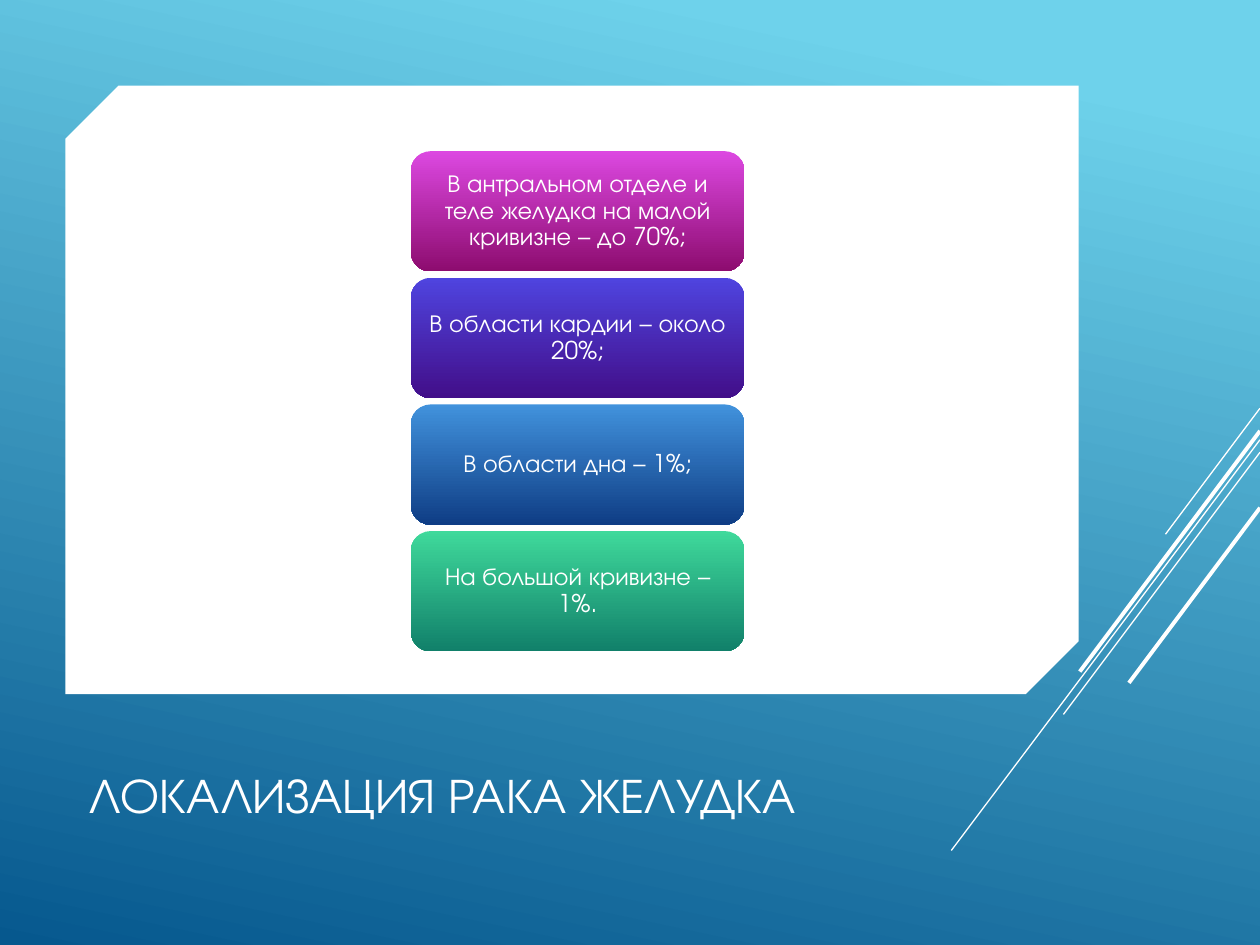
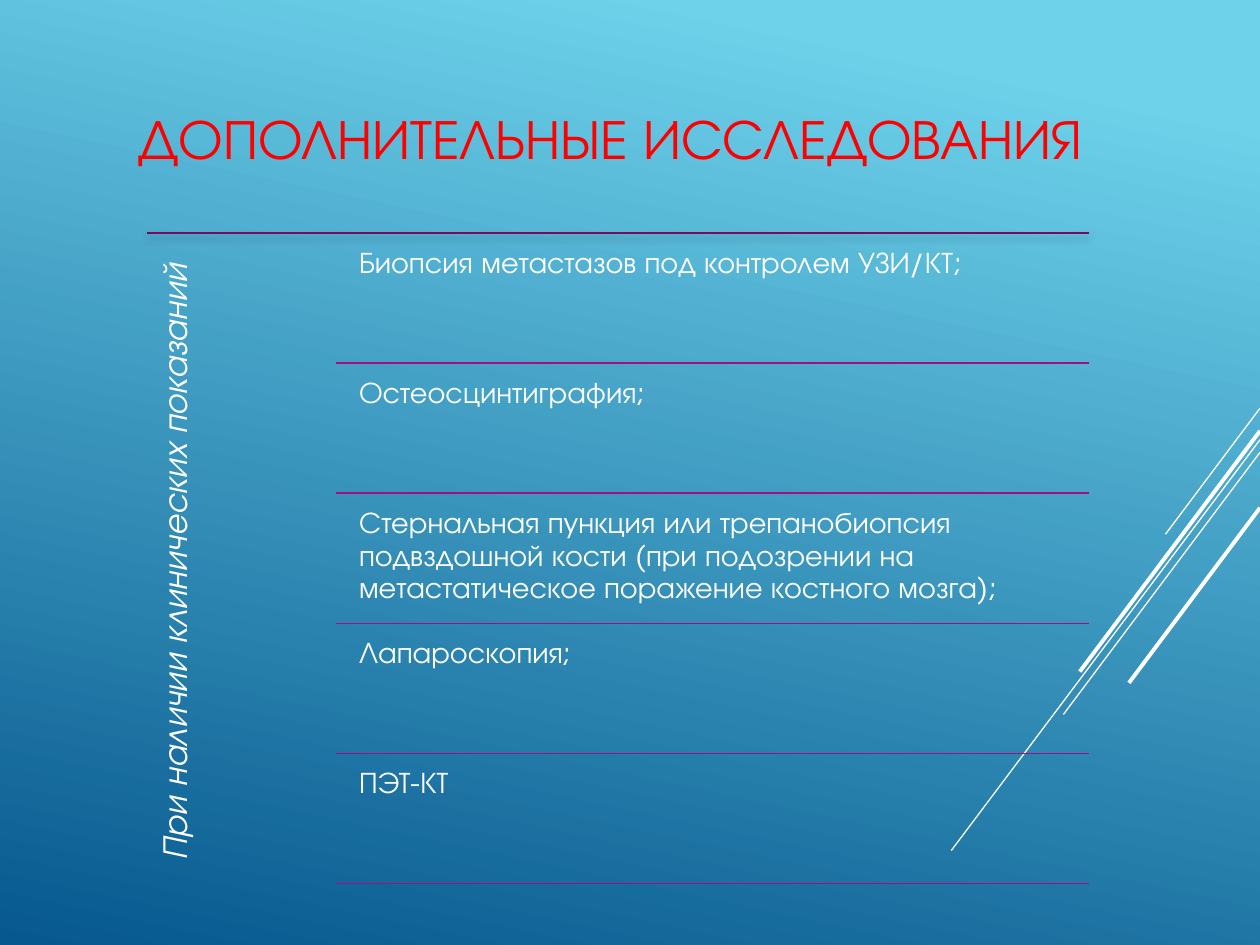
from lxml import etree
from pptx import Presentation
from pptx.dml.color import RGBColor
from pptx.enum.shapes import MSO_CONNECTOR, MSO_SHAPE
from pptx.enum.text import MSO_ANCHOR, MSO_AUTO_SIZE, PP_ALIGN
from pptx.oxml.ns import qn
from pptx.util import Inches, Pt

STRAIGHT = MSO_CONNECTOR.STRAIGHT
RECTANGLE = MSO_SHAPE.RECTANGLE
ROUNDED = MSO_SHAPE.ROUNDED_RECTANGLE
SNIPPED = MSO_SHAPE.SNIP_2_DIAG_RECTANGLE
TOP, MIDDLE, BOTTOM = MSO_ANCHOR.TOP, MSO_ANCHOR.MIDDLE, MSO_ANCHOR.BOTTOM
LEFT, CENTER = PP_ALIGN.LEFT, PP_ALIGN.CENTER
NO_AUTOFIT = MSO_AUTO_SIZE.NONE

FONT = "TeX Gyre Adventor"
WHITE, RED = "FFFFFF", "FF0000"
TOP_RULE, ROW_RULE = "7A0A60", "A50E82"
SLIDE_BOX = (0, 0, 10, 7.5)
BACKDROP_STOPS = ((0.1, "6ED2EB"), (1, "06588E"))
STREAKS = (
    ((10, 3.24), (9.25, 4.24), 0.75),
    ((10, 3.49), (7.55, 6.75), 0.75),
    ((10, 3.59), (8.44, 5.67), 0.75),
    ((10, 3.42), (8.57, 5.33), 2.25),
    ((10, 4.03), (8.96, 5.42), 2.25),
)
LOCATIONS = (
    ("В антральном отделе и теле желудка на малой кривизне – до 70%;", "DC48E1", "8D0C6F"),
    ("В области кардии – около 20%;", "4F44DF", "420E89"),
    ("В области дна – 1%;", "4192DC", "0F3D85"),
    ("На большой кривизне – 1%.", "3FD99B", "11806A"),
)
EXAMINATIONS = (
    "Биопсия метастазов под контролем УЗИ/КТ;",
    "Остеосцинтиграфия;",
    "Стернальная пункция или трепанобиопсия подвздошной кости "
    "(при подозрении на метастатическое поражение костного мозга);",
    "Лапароскопия;",
    "ПЭТ-КТ",
)


def color(value):
    """Turn a hex string into a colour."""
    return RGBColor.from_string(value)


def set_values(target, values):
    """Set attributes from a dict of format values."""
    for name, value in values.items():
        setattr(target, name, value)


def write(shape, text, size, ink=WHITE, align=LEFT, anchor=TOP,
          insets=(0.1, 0.05), spacing=0.9, italic=False):
    """Put one formatted paragraph into a shape."""
    across, down = (Inches(inset) for inset in insets)
    frame = shape.text_frame
    set_values(frame, {
        "word_wrap": True, "auto_size": NO_AUTOFIT, "vertical_anchor": anchor,
        "margin_left": across, "margin_right": across,
        "margin_top": down, "margin_bottom": down,
    })
    paragraph = frame.paragraphs[0]
    set_values(paragraph, {"alignment": align, "line_spacing": spacing})
    run = paragraph.add_run()
    run.text = text
    set_values(run.font, {"name": FONT, "size": Pt(size), "italic": italic})
    run.font.color.rgb = color(ink)


def add_block(slide, kind, box):
    """Add a preset shape without outline or shadow."""
    shape = slide.shapes.add_shape(kind, *map(Inches, box))
    shape.line.fill.background()
    shape.shadow.inherit = False
    return shape


def add_text(slide, box, text, size, **options):
    """Add a text box with one paragraph."""
    shape = slide.shapes.add_textbox(*map(Inches, box))
    write(shape, text, size, **options)
    return shape


def fill_gradient(shape, stops, angle):
    """Fill a shape with two stops, the angle running clockwise."""
    shape.fill.gradient()
    shape.fill.gradient_angle = 360 - angle
    for stop, (position, value) in zip(shape.fill.gradient_stops, stops):
        stop.position = position
        stop.color.rgb = color(value)


def add_line(slide, start, end, ink, width):
    """Draw a plain line and return its empty effect list."""
    line = slide.shapes.add_connector(STRAIGHT, *map(Inches, (*start, *end)))
    line.line.color.rgb = color(ink)
    line.line.width = Pt(width)
    return etree.SubElement(line.element.spPr, qn("a:effectLst"))


def add_soft_shadow(effects):
    """Put a blurred shadow below a line."""
    shadow = etree.SubElement(
        effects, qn("a:outerShdw"), blurRad=str(Pt(4)), dist=str(Pt(3)),
        dir="5400000", rotWithShape="0")
    black = etree.SubElement(shadow, qn("a:srgbClr"), val="000000")
    etree.SubElement(black, qn("a:alpha"), val="46000")


def add_base_slide(presentation, title, box, size, ink, anchor):
    """Add a slide with the shared backdrop, streaks and title style."""
    slide = presentation.slides.add_slide(presentation.slide_layouts[5])
    backdrop = add_block(slide, RECTANGLE, SLIDE_BOX)
    fill_gradient(backdrop, BACKDROP_STOPS, 102)
    slide.shapes.element.insert(2, backdrop.element)
    for start, end, width in STREAKS:
        add_line(slide, start, end, WHITE, width)
    heading = slide.shapes.title
    set_values(heading, dict(zip(("left", "top", "width", "height"), map(Inches, box))))
    write(heading, title, size, ink=ink, anchor=anchor)
    return slide


def add_panel(slide, box):
    """Add the white panel with two cut corners."""
    panel = add_block(slide, SNIPPED, box)
    panel.fill.solid()
    panel.fill.fore_color.rgb = color(WHITE)
    panel.adjustments[0] = 0.087
    panel.adjustments[1] = 0


def add_location_stack(slide, box, gap=0.05):
    """Stack the tumour locations as equal gradient blocks."""
    left, top, width, height = box
    pitch = (height + gap) / len(LOCATIONS)
    for index, (text, light, dark) in enumerate(LOCATIONS):
        block = add_block(slide, ROUNDED, (left, top + index * pitch, width, pitch - gap))
        fill_gradient(block, ((0, light), (1, dark)), 90)
        write(block, text, 14, align=CENTER, anchor=MIDDLE, insets=(0.06, 0.03))


def add_examination_list(slide, box, label_width=1.5):
    """List the examinations in ruled rows beside a vertical label."""
    left, top, width, height = box
    right, row_left = left + width, left + label_width
    text_left = row_left + 0.11
    pitch = height / len(EXAMINATIONS)
    add_soft_shadow(add_line(slide, (left, top), (right, top), TOP_RULE, 0.75))
    label = add_text(slide, (left, top, label_width, height + 0.06),
                     "При наличии клинических показаний", 20,
                     align=CENTER, insets=(0.08, 0.08), italic=True)
    label.element.txBody.bodyPr.set("vert", "vert270")
    for index, text in enumerate(EXAMINATIONS):
        row_top = top + index * pitch
        add_text(slide, (text_left, row_top + 0.05, right - text_left, pitch - 0.05),
                 text, 17, insets=(0.07, 0.07))
        bottom = row_top + pitch
        add_line(slide, (row_left, bottom), (right, bottom), ROW_RULE, 0.75)


def build_location_slide(presentation):
    """Build the slide on where the tumour sits."""
    slide = add_base_slide(presentation, "ЛОКАЛИЗАЦИЯ РАКА ЖЕЛУДКА",
                           (0.61, 5.67, 7.14, 0.92), 28, WHITE, BOTTOM)
    add_panel(slide, (0.52, 0.68, 8.04, 4.83))
    add_location_stack(slide, (3.26, 1.2, 2.65, 3.97))


def build_examination_slide(presentation):
    """Build the slide on additional examinations."""
    slide = add_base_slide(presentation, "ДОПОЛНИТЕЛЬНЫЕ ИССЛЕДОВАНИЯ",
                           (1, 0.3, 8.4, 1.64), 32, RED, MIDDLE)
    add_examination_list(slide, (1.17, 1.85, 7.47, 5.16))


def main():
    """Build and save the presentation."""
    presentation = Presentation()
    presentation.slide_width = Inches(10)
    presentation.slide_height = Inches(7.5)
    build_location_slide(presentation)
    build_examination_slide(presentation)
    presentation.save("out.pptx")


if __name__ == "__main__":
    main()
